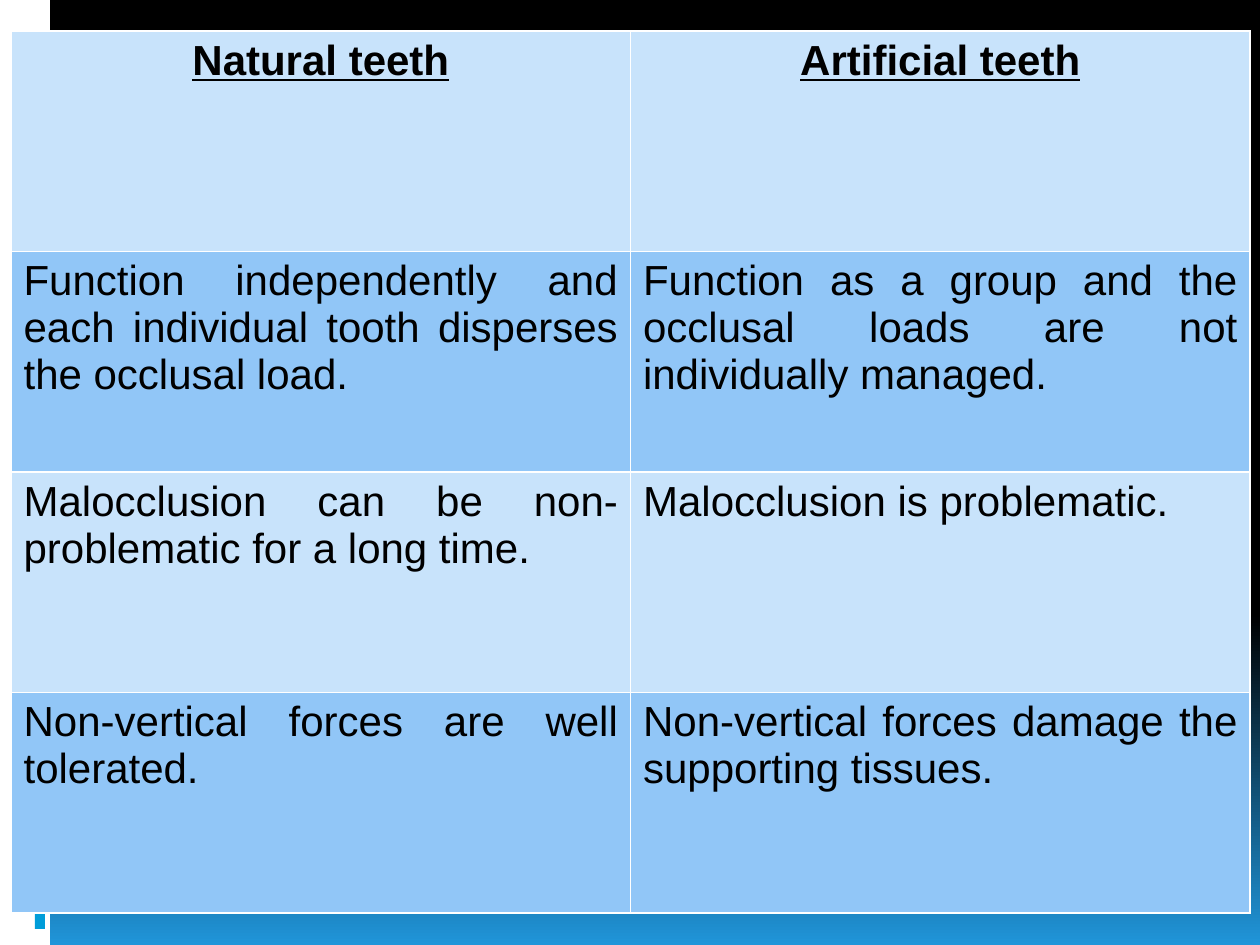
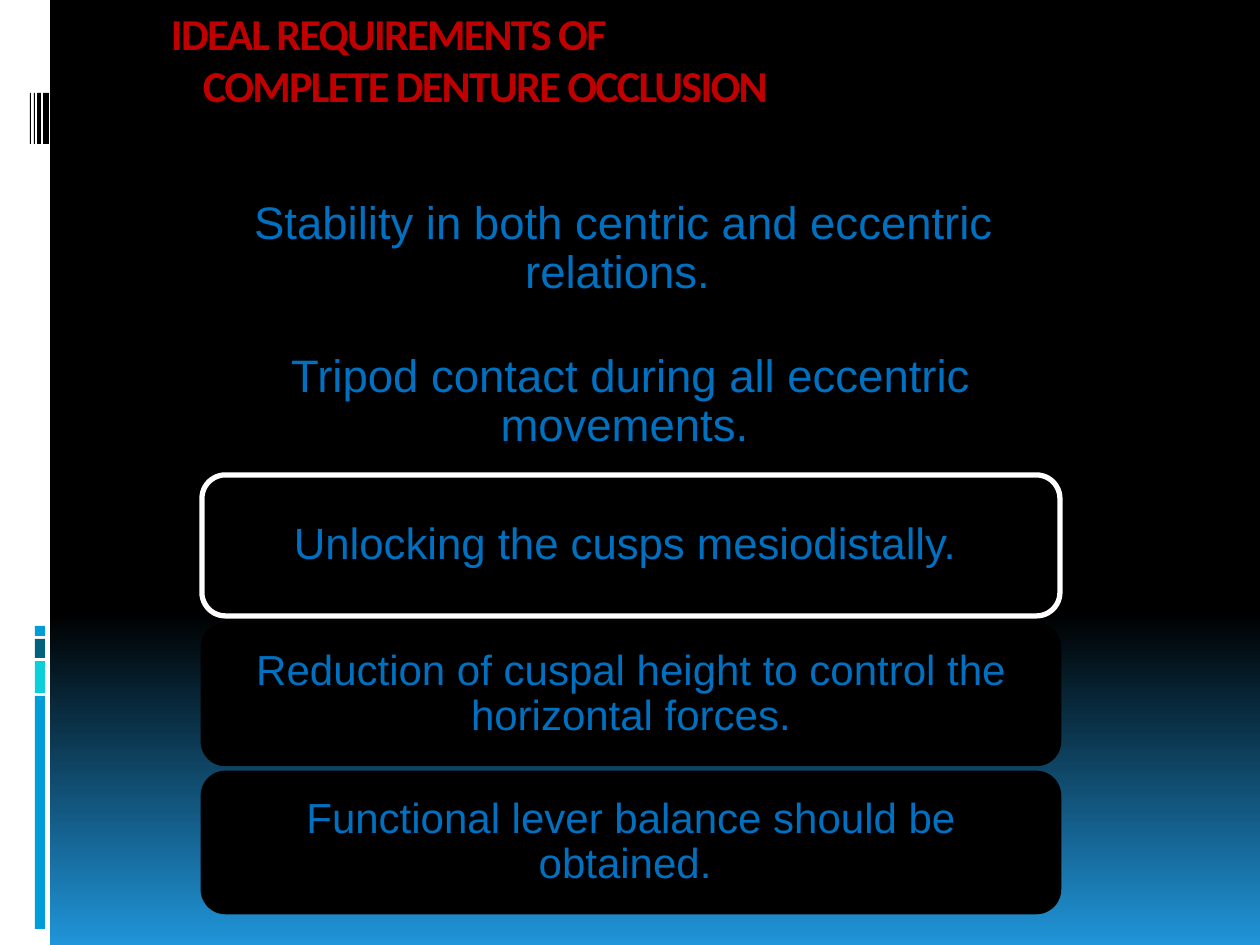
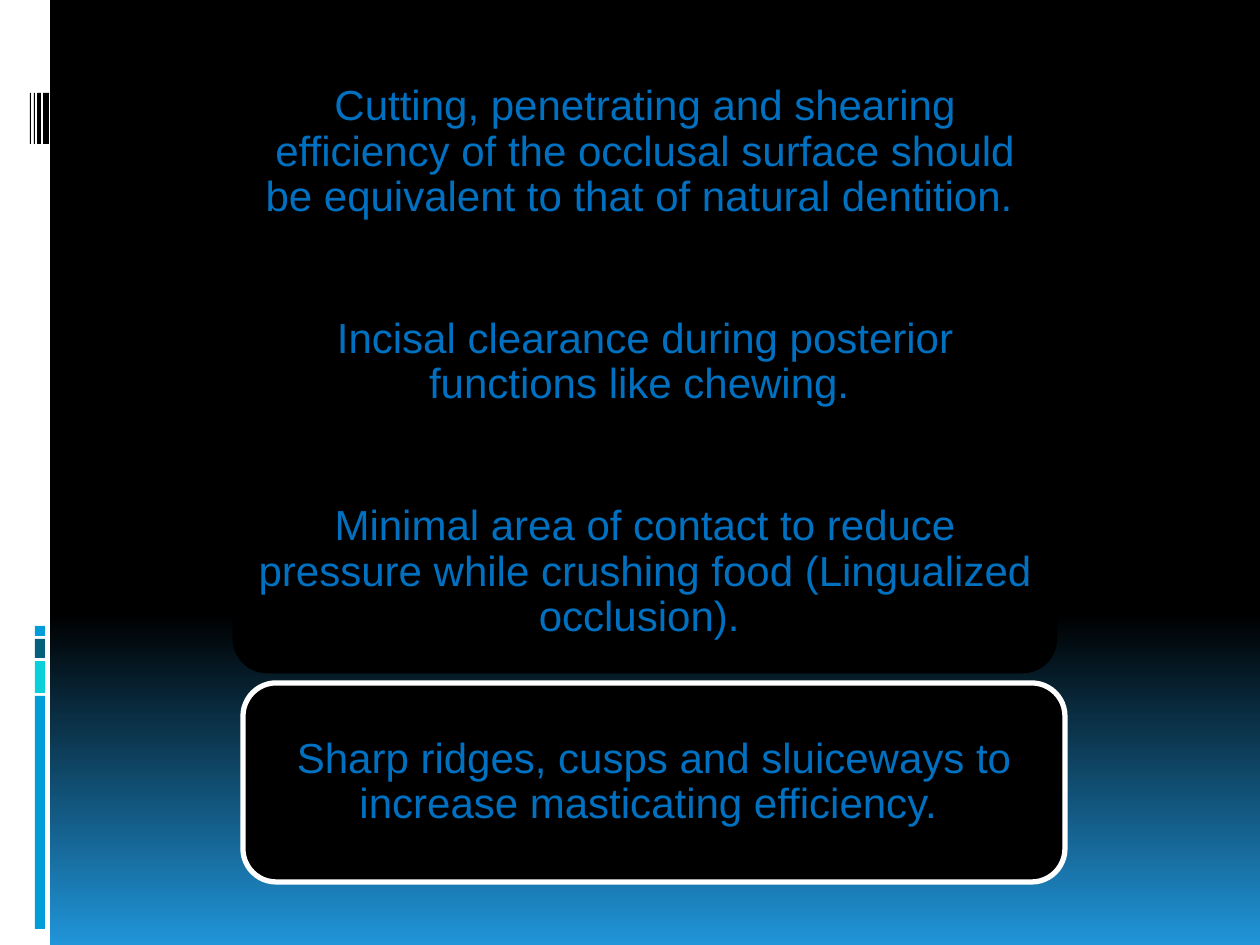
from lxml import etree
from pptx import Presentation
from pptx import util as u
from pptx.dml.color import RGBColor
from pptx.enum import shapes, text
from pptx.oxml.ns import qn

PX = 914400 / 126
BLACK = RGBColor(0x00, 0x00, 0x00)
WHITE = RGBColor(0xFF, 0xFF, 0xFF)
GLOW = RGBColor(0x20, 0x95, 0xD9)
BLUE = RGBColor(0x00, 0x9D, 0xD9)
CYAN = RGBColor(0x0B, 0xD0, 0xD9)
TEAL = RGBColor(0x04, 0x61, 0x7B)
RED = RGBColor(0xC0, 0x00, 0x00)
TEXT_BLUE = RGBColor(0x00, 0x70, 0xC0)
ROW_FILLS = [RGBColor(0xC8, 0xE3, 0xFB), RGBColor(0x91, 0xC6, 0xF7)]

STRIPES = [(696, 233, BLUE), (661, 32, CYAN), (639, 19, TEAL), (626, 10, BLUE)]
BARS = [(43, 6), (37, 4), (34, 1), (30, 1)]

TEETH = [
    ("Natural teeth", "Artificial teeth"),
    ("Function independently and each individual tooth disperses the occlusal load.",
     "Function as a group and the occlusal loads are not individually managed."),
    ("Malocclusion can be non-problematic for a long time. ",
     "Malocclusion is problematic."),
    ("Non-vertical forces are well tolerated.",
     "Non-vertical forces damage the supporting tissues."),
]
TITLE_LINES = [("IDEAL REQUIREMENTS OF", 117), ("COMPLETE DENTURE OCCLUSION", 149)]
STABILITY_CARDS = [
    (195, 179, 26, BLACK, "Stability in both centric and eccentric relations. "),
    (202, 332, 26, BLACK, "Tripod contact during all eccentric movements. "),
    (202, 475, 25, WHITE, "Unlocking the cusps mesiodistally. "),
    (202, 624, 24, BLACK, "Reduction of cuspal height to control the horizontal forces."),
    (202, 772, 24, BLACK, "Functional lever balance should be obtained. "),
]
EFFICIENCY_CARDS = [
    (234, BLACK, "Cutting, penetrating and shearing efficiency of the occlusal surface "
     "should be equivalent to that of natural dentition. "),
    (234, BLACK, "Incisal clearance during posterior functions like chewing. "),
    (234, BLACK, "Minimal area of contact to reduce pressure while crushing food "
     "(Lingualized occlusion). "),
    (243, WHITE, "Sharp ridges, cusps and sluiceways to increase masticating efficiency. "),
]


def px(length):
    return u.Emu(round(length * PX))


def set_background(deck):
    fill = deck.slide_master.background.fill
    fill.gradient()
    fill.gradient_angle = 270
    for stop, position, color in zip(fill.gradient_stops, (0.65, 1), (BLACK, GLOW)):
        stop.position = position
        stop.color.rgb = color


def add_block(page, kind, left, top, width, height, color):
    block = page.shapes.add_shape(kind, px(left), px(top), px(width), px(height))
    block.shadow.inherit = False
    block.fill.solid()
    block.fill.fore_color.rgb = color
    block.line.fill.background()
    return block


def add_page(deck):
    page = deck.slides.add_slide(deck.slide_layouts[6])
    rectangle = shapes.MSO_SHAPE.RECTANGLE
    add_block(page, rectangle, 0, 0, 50, 945, WHITE)
    for top, height, color in STRIPES:
        add_block(page, rectangle, 35, top, 10, height, color)
    for left, width in BARS:
        add_block(page, rectangle, left, 93, width, 51, BLACK)
    return page


def add_span(para, words, size, color, font="Arial", bold=False):
    span = para.add_run()
    span.text = words
    span.font.name = font
    span.font.size = u.Pt(size)
    span.font.bold = bold
    span.font.color.rgb = color
    return span


def add_text_frame(page, left, top, width, height):
    box = page.shapes.add_textbox(px(left), px(top), px(width), px(height))
    frame = box.text_frame
    frame.word_wrap = True
    frame.margin_left = frame.margin_right = px(12)
    frame.margin_top = frame.margin_bottom = px(6)
    return frame


def add_title(page):
    frame = add_text_frame(page, 42, 0, 1197, 116)
    for index, (words, indent) in enumerate(TITLE_LINES):
        para = frame.add_paragraph() if index else frame.paragraphs[0]
        para._p.get_or_add_pPr().set("marL", str(px(indent)))
        span = add_span(para, words, 25.2, RED, "Calibri", True)
        span._r.get_or_add_rPr().set("spc", "-100")


def add_card(page, left, top, width, height, outline, words, size, inset):
    card = add_block(page, shapes.MSO_SHAPE.ROUNDED_RECTANGLE,
                     left, top, width, height, BLACK)
    card.line.color.rgb = outline
    card.line.width = u.Pt(3 if outline == WHITE else 1.5)
    frame = add_text_frame(page, left + inset, top + inset,
                           width - 2 * inset, height - 2 * inset)
    frame.vertical_anchor = text.MSO_ANCHOR.MIDDLE
    para = frame.paragraphs[0]
    para.alignment = text.PP_ALIGN.CENTER
    para.line_spacing = 0.9
    add_span(para, words, size, TEXT_BLUE)


def set_borders(cell):
    properties = cell._tc.get_or_add_tcPr()
    for index, side in enumerate(("lnL", "lnR", "lnT", "lnB")):
        line = etree.Element(qn(f"a:{side}"), w=str(u.Pt(1)))
        fill = etree.SubElement(line, qn("a:solidFill"))
        etree.SubElement(fill, qn("a:srgbClr"), val=str(WHITE))
        properties.insert(index, line)


def add_teeth_table(page):
    table = page.shapes.add_table(len(TEETH), 2, px(11), px(31), px(1239), px(882)).table
    table.first_row = table.horz_banding = False
    for row, entries in enumerate(TEETH):
        header = row == 0
        for column, words in enumerate(entries):
            cell = table.cell(row, column)
            cell.fill.solid()
            cell.fill.fore_color.rgb = ROW_FILLS[row % 2]
            set_borders(cell)
            para = cell.text_frame.paragraphs[0]
            para.alignment = text.PP_ALIGN.CENTER if header else text.PP_ALIGN.JUSTIFY
            span = add_span(para, words, 24, BLACK, bold=header)
            span.font.underline = header


def main():
    deck = Presentation()
    deck.slide_width, deck.slide_height = px(1260), px(945)
    set_background(deck)

    add_teeth_table(add_page(deck))

    page = add_page(deck)
    add_title(page)
    for left, top, size, outline, words in STABILITY_CARDS:
        add_card(page, left, top, 858, 141, outline, words, size, 7)

    page = add_page(deck)
    for index, (left, outline, words) in enumerate(EFFICIENCY_CARDS):
        add_card(page, left, 53 + 210 * index, 822, 199, outline, words, 24, 10)

    deck.save("out.pptx")


if __name__ == "__main__":
    main()
